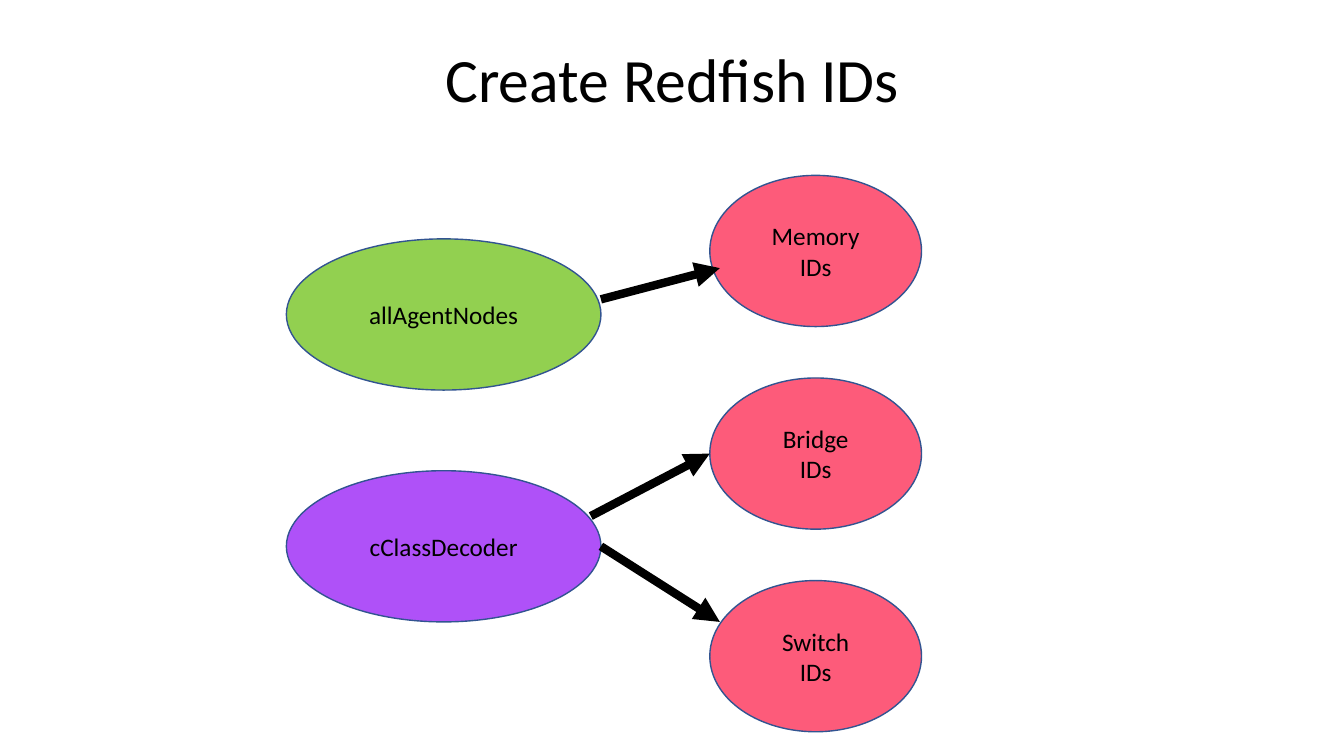
from lxml.etree import SubElement
from pptx import Presentation
from pptx.dml.color import RGBColor
from pptx.enum.shapes import MSO_CONNECTOR, MSO_SHAPE
from pptx.enum.text import MSO_ANCHOR, PP_ALIGN
from pptx.oxml.ns import qn
from pptx.util import Inches, Pt

TITLE = "Create Redfish IDs"
SOURCES = [("allAgentNodes", "92D050"), ("cClassDecoder", "AF51F8")]
TARGETS = ["Memory", "Bridge", "Switch"]
ARROWS = [
    ((5.96, 5.42), (7.14, 6.17)),
    ((5.86, 5.12), (7.04, 4.5)),
    ((5.96, 2.97), (7.14, 2.66)),
]
SOURCE_COLUMN = {"left": 2.84, "top": 2.37, "width": 3.12, "step": 2.3}
TARGET_COLUMN = {"left": 7.04, "top": 1.74, "width": 2.1, "step": 2.01}
ELLIPSE_HEIGHT = 1.5
TARGET_FILL, OUTLINE, BLACK = "FD5B7A", "325491", "000000"


def color(value):
    return RGBColor.from_string(value)


def write(shape, lines, size=18, spacing=1.0):
    frame = shape.text_frame
    frame.word_wrap = True
    frame.vertical_anchor = MSO_ANCHOR.MIDDLE
    for index, line in enumerate(lines):
        para = frame.add_paragraph() if index else frame.paragraphs[0]
        para.alignment = PP_ALIGN.CENTER
        para.line_spacing = spacing
        span = para.add_run()
        span.text = line
        span.font.name = "Calibri"
        span.font.size = Pt(size)
        span.font.color.rgb = color(BLACK)


def add_ellipse(page, column, row, lines, fill):
    top = column["top"] + row * column["step"]
    ellipse = page.shapes.add_shape(
        MSO_SHAPE.OVAL, Inches(column["left"]), Inches(top),
        Inches(column["width"]), Inches(ELLIPSE_HEIGHT))
    ellipse.shadow.inherit = False
    ellipse.fill.solid()
    ellipse.fill.fore_color.rgb = color(fill)
    ellipse.line.color.rgb = color(OUTLINE)
    ellipse.line.width = Pt(1)
    write(ellipse, lines)


def add_arrow(page, start, end):
    arrow = page.shapes.add_connector(
        MSO_CONNECTOR.STRAIGHT, *map(Inches, start + end))
    arrow.line.color.rgb = color(BLACK)
    arrow.line.width = Pt(6)
    SubElement(arrow.line._get_or_add_ln(), qn("a:tailEnd"), type="triangle")
    SubElement(arrow._element.spPr, qn("a:effectLst"))


def main():
    deck = Presentation()
    deck.slide_width, deck.slide_height = Inches(13.33), Inches(7.5)
    page = deck.slides.add_slide(deck.slide_layouts[6])
    box = page.shapes.add_textbox(
        Inches(0.92), Inches(0.4), Inches(11.5), Inches(0.83))
    write(box, [TITLE], size=44, spacing=0.9)
    for row, (name, fill) in enumerate(SOURCES):
        add_ellipse(page, SOURCE_COLUMN, row, [name], fill)
    for row, name in enumerate(TARGETS):
        add_ellipse(page, TARGET_COLUMN, row, [name, "IDs"], TARGET_FILL)
    for start, end in ARROWS:
        add_arrow(page, start, end)
    deck.save("out.pptx")


if __name__ == "__main__":
    main()
